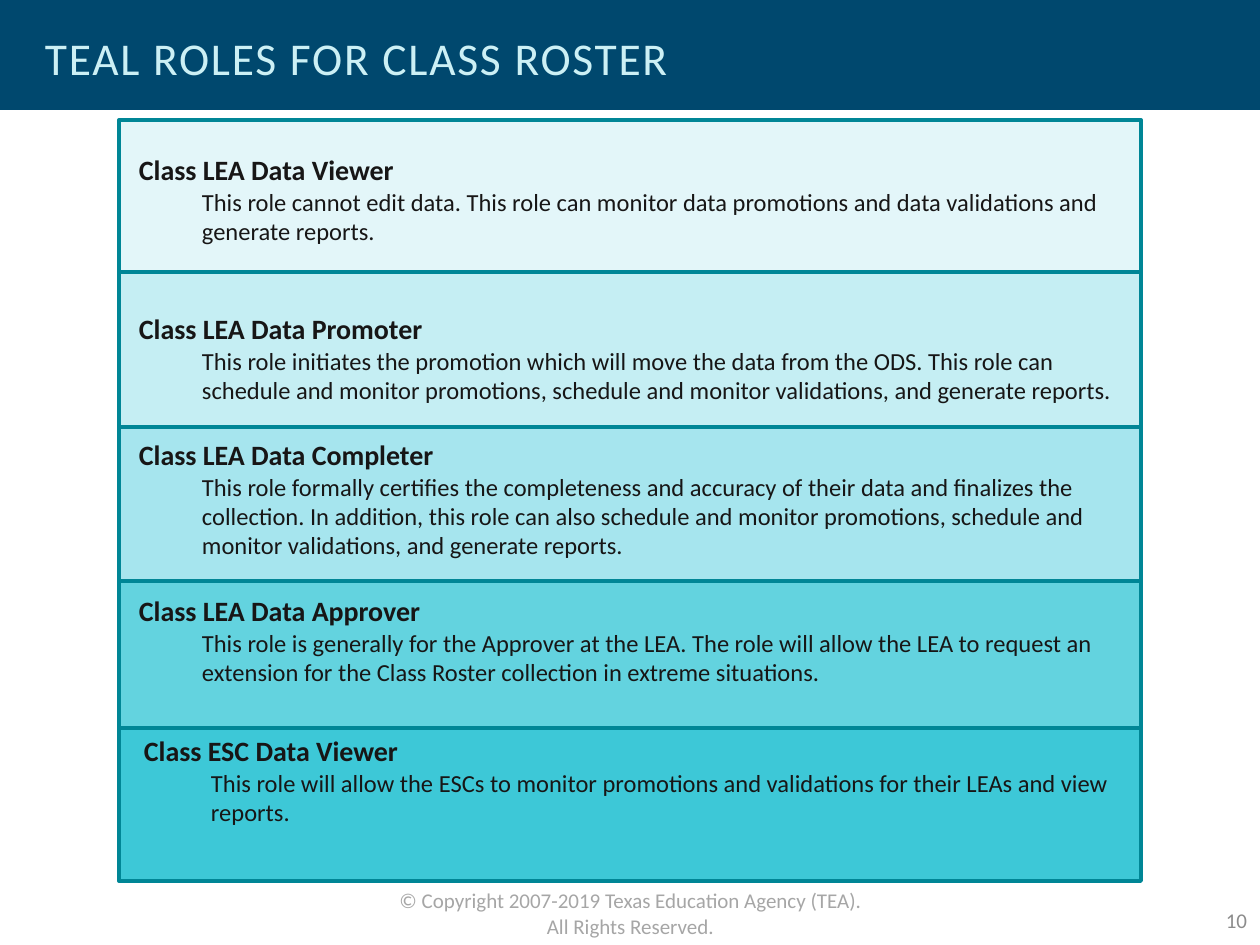
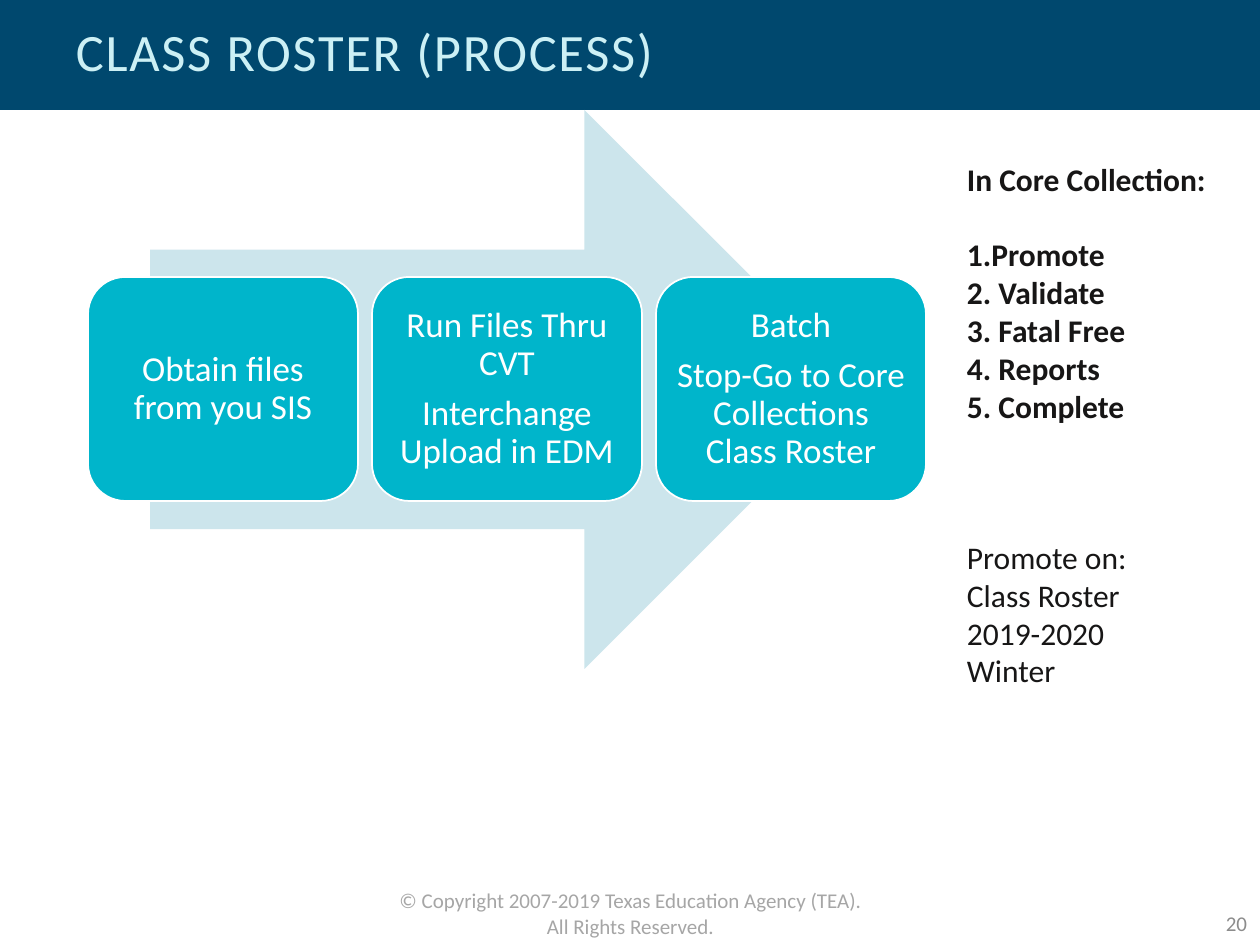
from pptx import Presentation
from pptx import util as u
from pptx.dml.color import RGBColor
from pptx.enum import shapes, text

# Content
COPYRIGHT = "© Copyright 2007-2019 Texas Education Agency (TEA). All Rights Reserved."

ROLES_TITLE = "TEAL ROLES FOR CLASS ROSTER"
# role, description
ROLES = [
    ("Class LEA Data Viewer",
     "This role cannot edit data. This role can monitor data promotions and data "
     "validations and generate reports."),
    ("Class LEA Data Promoter",
     "This role initiates the promotion which will move the data from the ODS. This role "
     "can schedule and monitor promotions, schedule and monitor validations, and "
     "generate reports."),
    ("Class LEA Data Completer",
     "This role formally certifies the completeness and accuracy of their data and "
     "finalizes the collection. In addition, this role can also schedule and monitor "
     "promotions, schedule and monitor validations, and generate reports."),
    ("Class LEA Data Approver",
     "This role is generally for the Approver at the LEA. The role will allow the LEA to "
     "request an extension for the Class Roster collection in extreme situations."),
    ("Class ESC Data Viewer",
     "This role will allow the ESCs to monitor promotions and validations for their LEAs "
     "and view reports."),
]

PROCESS_TITLE = "CLASS ROSTER (PROCESS)"
STEPS = [
    ["Obtain files from you SIS"],
    ["Run Files Thru CVT", "Interchange Upload in EDM"],
    ["Batch", "Stop-Go to Core Collections Class Roster"],
]
# bold, space before the group in points, lines
CORE_COLLECTION = [
    (True, 0, ["In Core Collection:"]),
    (True, 21.5, ["1.Promote", "2. Validate", "3. Fatal Free", "4. Reports", "5. Complete"]),
    (False, 65, ["Promote on:", "Class Roster", "2019-2020", "Winter"]),
]

# Shared look
FONT = "Calibri"
NAVY = RGBColor(0x00, 0x48, 0x6E)
TITLE_AQUA = RGBColor(0xCC, 0xF0, 0xF5)
INK = RGBColor(0x17, 0x16, 0x16)
FOOTER_GREY = RGBColor(0xA6, 0xA6, 0xA6)
NUMBER_GREY = RGBColor(0x8C, 0x8C, 0x8C)
WHITE = RGBColor(0xFF, 0xFF, 0xFF)
BAND_LINE = RGBColor(0x00, 0x86, 0x96)
BAND_FILLS = [
    RGBColor(0xE3, 0xF6, 0xF9),
    RGBColor(0xC5, 0xEE, 0xF3),
    RGBColor(0xA6, 0xE5, 0xEE),
    RGBColor(0x63, 0xD3, 0xDF),
    RGBColor(0x3D, 0xC8, 0xD7),
]
ARROW_BLUE = RGBColor(0xCC, 0xE5, 0xEC)
STEP_TEAL = RGBColor(0x00, 0xB5, 0xCB)

SLIDE_W, SLIDE_H = 1260, 945
INSETS = (13, 6, 13, 6)


def px(length):
    return round(length * u.Inches(1) / 126)


def set_frame(shape, anchor=text.MSO_ANCHOR.TOP, insets=INSETS):
    frame = shape.text_frame
    frame.word_wrap = True
    frame.vertical_anchor = anchor
    (frame.margin_left, frame.margin_top,
     frame.margin_right, frame.margin_bottom) = map(px, insets)
    return frame


def add_paragraph(frame, words, size, color, bold=False, align=text.PP_ALIGN.LEFT,
                  before=0, spacing=None):
    first = frame.paragraphs[0]
    paragraph = frame.add_paragraph() if first.runs else first
    paragraph.add_run().text = words
    paragraph.alignment = align
    if before:
        paragraph.space_before = u.Pt(before)
    if spacing:
        paragraph.line_spacing = spacing
    font = paragraph.font
    font.name, font.size, font.bold = FONT, u.Pt(size), bold
    font.color.rgb = color
    return paragraph


def add_box(slide, kind, box, fill, line=None, width=1):
    shape = slide.shapes.add_shape(kind, *map(px, box))
    shape.shadow.inherit = False
    shape.fill.solid()
    shape.fill.fore_color.rgb = fill
    if line is None:
        shape.line.fill.background()
    else:
        shape.line.color.rgb = line
        shape.line.width = u.Pt(width)
    return shape


def add_text(slide, box, anchor=text.MSO_ANCHOR.TOP):
    return set_frame(slide.shapes.add_textbox(*map(px, box)), anchor)


def add_slide(deck, title, title_box, title_size, number, number_top):
    """Blank slide with the title band, copyright line and page number."""
    slide = deck.slides.add_slide(deck.slide_layouts[6])
    add_box(slide, shapes.MSO_SHAPE.RECTANGLE, (0, 0, SLIDE_W, 110), NAVY)
    add_paragraph(add_text(slide, (383, 882, 495, 59)), COPYRIGHT, 12, FOOTER_GREY,
                  align=text.PP_ALIGN.CENTER)
    heading = add_paragraph(add_text(slide, title_box, text.MSO_ANCHOR.MIDDLE),
                            title, title_size, TITLE_AQUA, spacing=0.9)
    heading.runs[0]._r.get_or_add_rPr().set("spc", "100")
    add_paragraph(add_text(slide, (977, number_top, 283, 50), text.MSO_ANCHOR.MIDDLE),
                  number, 12, NUMBER_GREY, align=text.PP_ALIGN.RIGHT)
    return slide


def build_roles(deck):
    slide = add_slide(deck, ROLES_TITLE, (32, 6, 1050, 110), 26, "10", 895)
    edges = [120, 272, 427, 581, 728, 881]
    # left inset, top inset and description indent of each band
    offsets = [(20, 33, 63), (20, 40, 63), (20, 11, 63), (20, 13, 63), (25, 6, 67)]
    bands = zip(ROLES, BAND_FILLS, edges, edges[1:], offsets)
    for (role, description), fill, top, bottom, (left, inset, indent) in bands:
        band = add_box(slide, shapes.MSO_SHAPE.RECTANGLE, (119, top, 1022, bottom - top),
                       fill, BAND_LINE, 2.25)
        frame = set_frame(band, insets=(left, inset, 6, 0))
        add_paragraph(frame, role, 16, INK, bold=True)
        detail = add_paragraph(frame, description, 14, INK)
        detail._p.get_or_add_pPr().set("marL", str(px(indent)))


def build_process(deck):
    slide = add_slide(deck, PROCESS_TITLE, (63, 0, 1008, 110), 30, "20", 898)
    add_box(slide, shapes.MSO_SHAPE.RIGHT_ARROW, (150, 110, 714, 559), ARROW_BLUE)

    # Steps across the arrow
    step_w, step_gap = 270, 14
    for i, lines in enumerate(STEPS):
        step = add_box(slide, shapes.MSO_SHAPE.ROUNDED_RECTANGLE,
                       (88 + i * (step_w + step_gap), 277, step_w, 224), STEP_TEAL, WHITE)
        frame = set_frame(step, text.MSO_ANCHOR.MIDDLE, (10, 0, 10, 0))
        for j, line in enumerate(lines):
            add_paragraph(frame, line, 20, WHITE, align=text.PP_ALIGN.CENTER,
                          before=7 if j else 0, spacing=0.9)

    # Core collection checklist
    frame = add_text(slide, (954, 154, 283, 540))
    for bold, gap, lines in CORE_COLLECTION:
        for j, line in enumerate(lines):
            add_paragraph(frame, line, 18, INK, bold, before=0 if j else gap)


def main():
    deck = Presentation()
    deck.slide_width, deck.slide_height = px(SLIDE_W), px(SLIDE_H)
    build_roles(deck)
    build_process(deck)
    deck.save("out.pptx")


if __name__ == "__main__":
    main()
